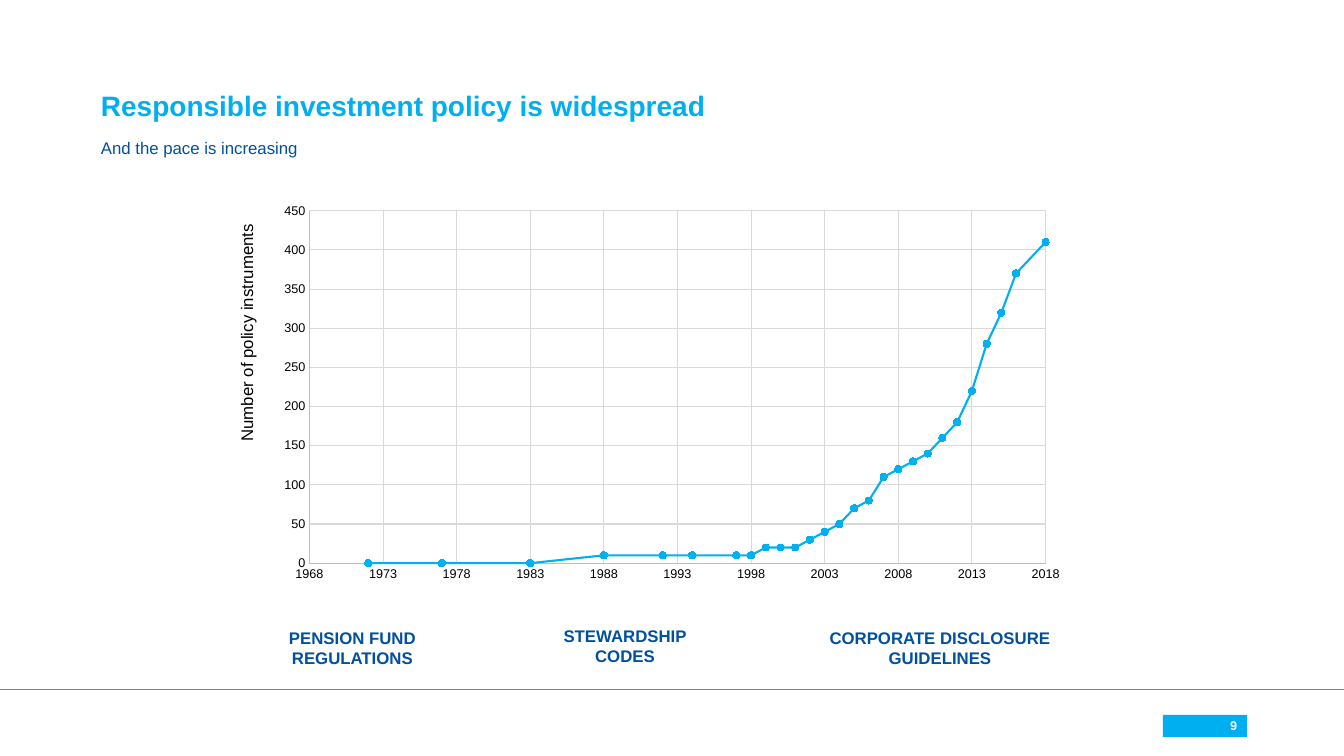
from dataclasses import dataclass

from lxml import etree
from pptx import Presentation
from pptx import util as u
from pptx.chart.data import XyChartData
from pptx.dml.color import RGBColor
from pptx.enum import chart as ch
from pptx.enum import shapes, text
from pptx.oxml.ns import qn

EMU_PER_PX = u.Inches(1) / 100.8


def px(length: int) -> u.Emu:
    return u.Emu(round(length * EMU_PER_PX))


@dataclass(frozen=True)
class Theme:
    font: str = "Arial"
    sky: RGBColor = RGBColor(0x00, 0xAF, 0xF0)
    series: RGBColor = RGBColor(0x00, 0xB0, 0xF0)
    navy: RGBColor = RGBColor(0x00, 0x50, 0xA0)
    black: RGBColor = RGBColor(0x00, 0x00, 0x00)
    white: RGBColor = RGBColor(0xFF, 0xFF, 0xFF)
    axis: RGBColor = RGBColor(0xBF, 0xBF, 0xBF)
    grid: RGBColor = RGBColor(0xD9, 0xD9, 0xD9)
    title_pt: int = 20
    body_pt: int = 12
    chart_pt: int = 10
    small_pt: int = 9


THEME = Theme()


@dataclass(frozen=True)
class Label:
    words: str
    left: int
    top: int
    width: int
    height: int
    color: RGBColor = THEME.navy
    size: int = THEME.body_pt
    bold: bool = False
    align: text.PP_ALIGN = text.PP_ALIGN.LEFT
    anchor: text.MSO_ANCHOR = text.MSO_ANCHOR.TOP
    spacing: float = 1.0
    rotation: int = 0


def theme_label(words: str, left: int, top: int, width: int) -> Label:
    return Label(words, left, top, width, 50, bold=True, align=text.PP_ALIGN.CENTER)


LABELS = [
    Label("Responsible investment policy is widespread", 91, 73, 1155, 55,
          THEME.sky, THEME.title_pt, True, anchor=text.MSO_ANCHOR.BOTTOM, spacing=0.9),
    Label("And the pace is increasing", 91, 135, 1155, 46, spacing=0.9),
    Label("Number of policy instruments", 111, 301, 271, 30, THEME.black, rotation=270),
    theme_label("PENSION FUND REGULATIONS", 269, 623, 167),
    theme_label("STEWARDSHIP CODES", 528, 621, 194),
    theme_label("CORPORATE DISCLOSURE GUIDELINES", 794, 623, 292),
]
PAGE_NUMBER = Label("9", 1163, 715, 84, 22, THEME.white, THEME.small_pt, True,
                    text.PP_ALIGN.RIGHT, text.MSO_ANCHOR.MIDDLE)

INSTRUMENTS_BY_YEAR = {
    1972: 0, 1977: 0, 1983: 0, 1988: 10, 1992: 10, 1994: 10, 1997: 10, 1998: 10, 1999: 20,
    2000: 20, 2001: 20, 2002: 30, 2003: 40, 2004: 50, 2005: 70, 2006: 80, 2007: 110,
    2008: 120, 2009: 130, 2010: 140, 2011: 160, 2012: 180, 2013: 220, 2014: 280,
    2015: 320, 2016: 370, 2018: 410,
}


def write(shape, label: Label) -> None:
    frame = shape.text_frame
    frame.word_wrap = True
    frame.vertical_anchor = label.anchor
    para = frame.paragraphs[0]
    para.text = label.words
    para.alignment = label.align
    para.line_spacing = label.spacing
    font = para.font
    font.name, font.size, font.bold = THEME.font, u.Pt(label.size), label.bold
    font.color.rgb = label.color


def bounds(label: Label) -> list[u.Emu]:
    return [px(v) for v in (label.left, label.top, label.width, label.height)]


def add_label(page, label: Label) -> None:
    box = page.shapes.add_textbox(*bounds(label))
    box.rotation = label.rotation
    write(box, label)


def add_page_number(page) -> None:
    badge = page.shapes.add_shape(shapes.MSO_SHAPE.RECTANGLE, *bounds(PAGE_NUMBER))
    badge.shadow.inherit = False
    badge.fill.solid()
    badge.fill.fore_color.rgb = THEME.sky
    badge.line.fill.background()
    write(badge, PAGE_NUMBER)


def add_footer_rule(page) -> None:
    rule = page.shapes.add_connector(
        shapes.MSO_CONNECTOR.STRAIGHT, 0, px(689), px(1344), px(689))
    rule.line.color.rgb = THEME.sky
    rule.line.width = u.Pt(0.5)
    etree.SubElement(rule._element.spPr, qn("a:effectLst"))


def style_axis(axis, low: int, high: int, step: int) -> None:
    axis.minimum_scale, axis.maximum_scale, axis.major_unit = low, high, step
    axis.major_tick_mark = axis.minor_tick_mark = ch.XL_TICK_MARK.NONE
    axis.has_title = False
    axis.has_major_gridlines = True
    for line, color in ((axis.format.line, THEME.axis),
                        (axis.major_gridlines.format.line, THEME.grid)):
        line.color.rgb = color
        line.width = u.Pt(0.75)
    labels = axis.tick_labels
    labels.number_format, labels.number_format_is_linked = "General", False
    labels.font.name, labels.font.size = THEME.font, u.Pt(THEME.small_pt)
    labels.font.color.rgb = THEME.black


def fix_plot_area(chart) -> None:
    """Pin the inner plot area to fixed fractions of the chart frame."""
    area = chart._chartSpace.chart.plotArea
    for old in area.findall(qn("c:layout")):
        area.remove(old)
    layout = etree.Element(qn("c:layout"))
    area.insert(0, layout)
    manual = etree.SubElement(layout, qn("c:manualLayout"))
    settings = {"layoutTarget": "inner", "xMode": "edge", "yMode": "edge",
                "x": "0.05", "y": "0.04", "w": "0.91", "h": "0.89"}
    for tag, value in settings.items():
        etree.SubElement(manual, qn(f"c:{tag}")).set("val", value)


def add_policy_chart(page) -> None:
    data = XyChartData()
    points = data.add_series("Series 1")
    for year, count in INSTRUMENTS_BY_YEAR.items():
        points.add_data_point(year, count)
    chart = page.shapes.add_chart(ch.XL_CHART_TYPE.XY_SCATTER_LINES, px(269), px(195),
                                  px(809), px(396), data).chart
    chart.has_title = chart.has_legend = False
    chart.font.name, chart.font.size = THEME.font, u.Pt(THEME.chart_pt)
    chart.font.color.rgb = THEME.black
    chart.plots[0].vary_by_categories = False
    style_axis(chart.category_axis, 1968, 2018, 5)
    style_axis(chart.value_axis, 0, 450, 50)
    fix_plot_area(chart)

    series = chart.plots[0].series[0]
    series.smooth = False
    series.format.line.color.rgb = THEME.series
    series.format.line.width = u.Pt(1.5)
    marker = series.marker
    marker.style, marker.size = ch.XL_MARKER_STYLE.CIRCLE, 5
    marker.format.fill.solid()
    marker.format.fill.fore_color.rgb = THEME.series
    marker.format.line.color.rgb = THEME.series


def main() -> None:
    deck = Presentation()
    deck.slide_width, deck.slide_height = px(1344), px(756)
    page = deck.slides.add_slide(deck.slide_layouts[6])
    add_footer_rule(page)
    add_page_number(page)
    add_policy_chart(page)
    for label in LABELS:
        add_label(page, label)
    deck.save("out.pptx")


if __name__ == "__main__":
    main()
